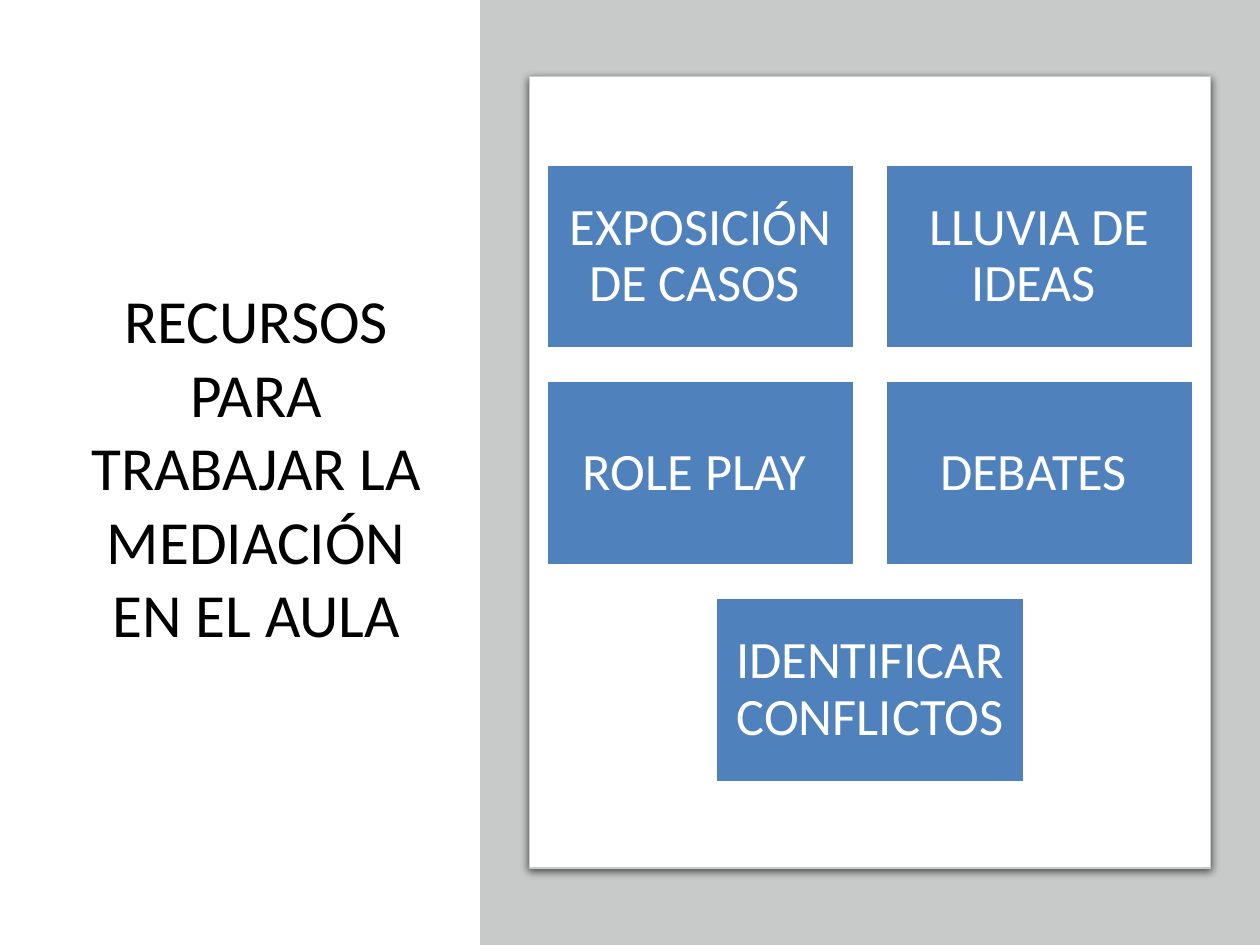
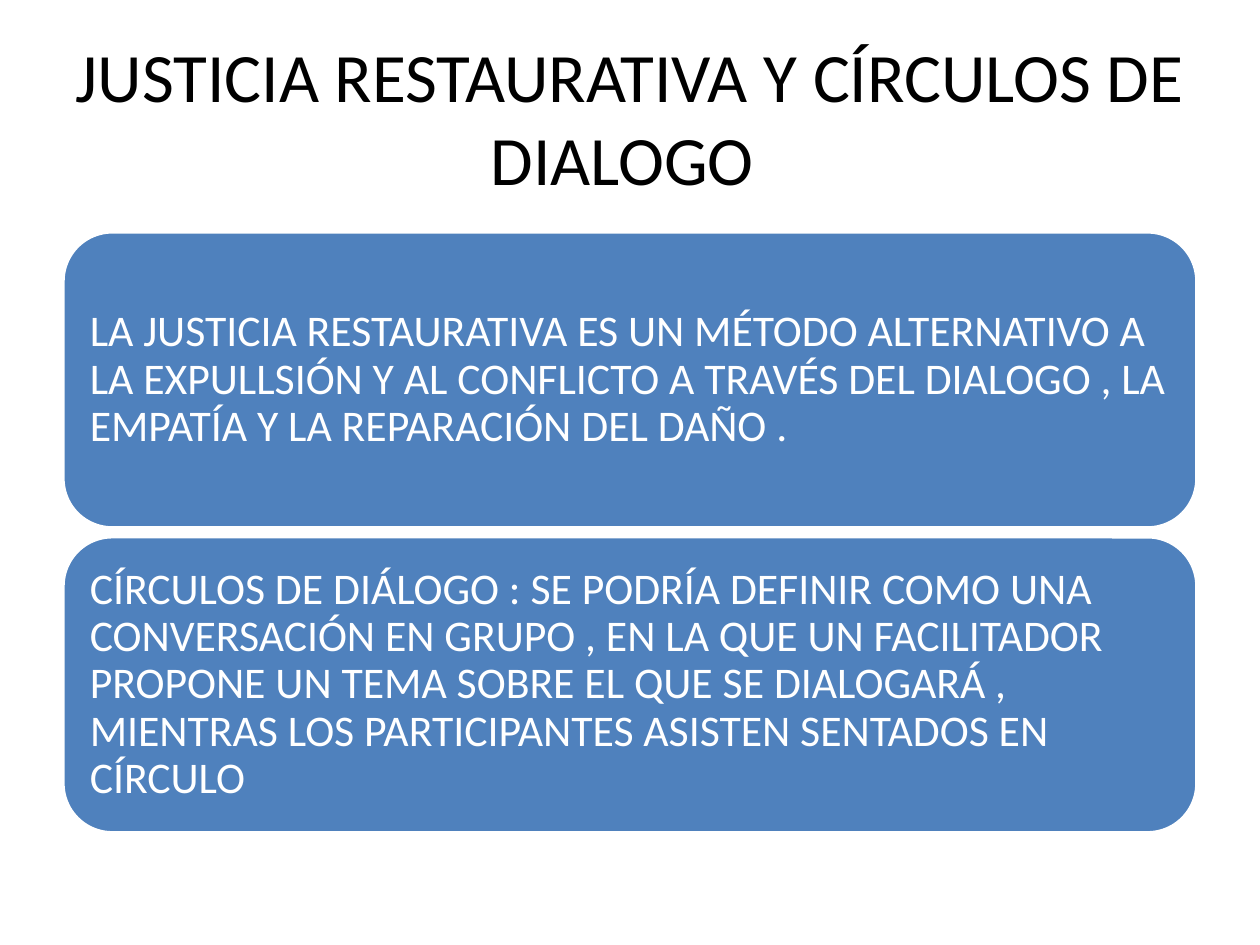
import pptx
import pptx.util
import pptx.dml.color
import pptx.enum.shapes
import pptx.enum.text
import lxml.etree
from dataclasses import dataclass

Inches, Pt = pptx.util.Inches, pptx.util.Pt
RGB = pptx.dml.color.RGBColor.from_string
Kind = pptx.enum.shapes.MSO_SHAPE
Align = pptx.enum.text.PP_ALIGN

# Content
TOOLS_TITLE = "RECURSOS PARA TRABAJAR LA MEDIACIÓN EN EL AULA"
TOOLS = [
    ["EXPOSICIÓN DE CASOS ", "LLUVIA DE IDEAS "],
    ["ROLE PLAY ", "DEBATES "],
    ["IDENTIFICAR CONFLICTOS "],
]
TALK_TITLE = "JUSTICIA RESTAURATIVA Y CÍRCULOS DE DIALOGO "
TALKS = [
    "LA JUSTICIA RESTAURATIVA ES UN MÉTODO ALTERNATIVO A LA EXPULLSIÓN "
    "Y AL CONFLICTO A TRAVÉS DEL DIALOGO , LA EMPATÍA Y LA REPARACIÓN "
    "DEL DAÑO .",
    "CÍRCULOS DE DIÁLOGO : SE PODRÍA DEFINIR COMO UNA CONVERSACIÓN EN "
    "GRUPO , EN LA QUE UN FACILITADOR PROPONE UN TEMA SOBRE EL QUE SE "
    "DIALOGARÁ , MIENTRAS LOS PARTICIPANTES ASISTEN SENTADOS EN CÍRCULO",
]


@dataclass(frozen=True)
class Theme:
    font: str = "Calibri"
    ink: str = "000000"
    paper: str = "FFFFFF"
    blue: str = "4F81BD"
    grey: str = "C8CACA"
    side: float = 35
    head: float = 39.6
    tile: float = 30
    body: float = 25


T = Theme()


# Shared parts
def write(frame, text, size, color, align, pad=0.1, lead=None):
    frame.word_wrap = True
    frame.auto_size = pptx.enum.text.MSO_AUTO_SIZE.NONE
    frame.vertical_anchor = pptx.enum.text.MSO_ANCHOR.MIDDLE
    frame.margin_left = frame.margin_right = Inches(pad)
    frame.margin_top = frame.margin_bottom = Inches(pad)
    para = frame.paragraphs[0]
    para.alignment = align
    if lead:
        para.line_spacing = lead
    run = para.add_run()
    run.text = text
    run.font.name, run.font.size = T.font, Pt(size)
    run.font.color.rgb = RGB(color)


def add_slide(deck, title, box, size):
    slide = deck.slides.add_slide(deck.slide_layouts[5])
    head = slide.shapes.title
    head.left, head.top, head.width, head.height = map(Inches, box)
    write(head.text_frame, title, size, T.ink, Align.CENTER)
    return slide


def add_box(slide, kind, box, fill, line=None, width=2):
    shape = slide.shapes.add_shape(kind, *map(Inches, box))
    shape.shadow.inherit = False
    shape.fill.solid()
    shape.fill.fore_color.rgb = RGB(fill)
    if line:
        shape.line.color.rgb = RGB(line)
        shape.line.width = Pt(width)
    else:
        shape.line.fill.background()
    return shape


def add_shadow(shape):
    ns = pptx.oxml.ns.qn
    effects = shape.element.spPr.find(ns("a:effectLst"))
    outer = lxml.etree.SubElement(
        effects, ns("a:outerShdw"), blurRad=str(Pt(4.5)), dist=str(Pt(1.5)),
        dir="5400000", algn="ctr", rotWithShape="0")
    color = lxml.etree.SubElement(outer, ns("a:srgbClr"), val=T.ink)
    lxml.etree.SubElement(color, ns("a:alpha"), val="63000")


# Slide 1: centred rows of tiles on a card
def add_tools(deck):
    slide = add_slide(deck, TOOLS_TITLE, (0.53, 0.69, 3.01, 6.02), T.side)
    add_box(slide, Kind.RECTANGLE, (3.81, 0, 6.19, 7.5), T.grey)
    left, wide = 4.2, 5.41
    card = add_box(slide, Kind.ROUNDED_RECTANGLE, (left, 0.61, wide, 6.28),
                   T.paper, T.grey, 0.75)
    card.adjustments[0] = 0
    add_shadow(card)
    w, h, step_x, step_y, top = 2.45, 1.47, 2.69, 1.72, 1.3
    for r, row in enumerate(TOOLS):
        start = left + (wide - w - step_x * (len(row) - 1)) / 2
        for c, text in enumerate(row):
            tile = add_box(slide, Kind.RECTANGLE,
                           (start + c * step_x, top + r * step_y, w, h),
                           T.blue, T.paper)
            write(tile.text_frame, text, T.tile, T.paper, Align.CENTER,
                  0.12, 0.9)


# Slide 2: stacked panels
def add_talks(deck):
    slide = add_slide(deck, TALK_TITLE, (0.5, 0.3, 9, 1.25), T.head)
    top, step = 1.84, 2.42
    for i, text in enumerate(TALKS):
        panel = add_box(slide, Kind.ROUNDED_RECTANGLE,
                        (0.5, top + i * step, 9, 2.35), T.blue, T.paper)
        write(panel.text_frame, text, T.body, T.paper, Align.LEFT, lead=0.9)


def main():
    deck = pptx.Presentation()
    deck.slide_width, deck.slide_height = Inches(10), Inches(7.5)
    add_tools(deck)
    add_talks(deck)
    deck.save("out.pptx")


if __name__ == "__main__":
    main()
